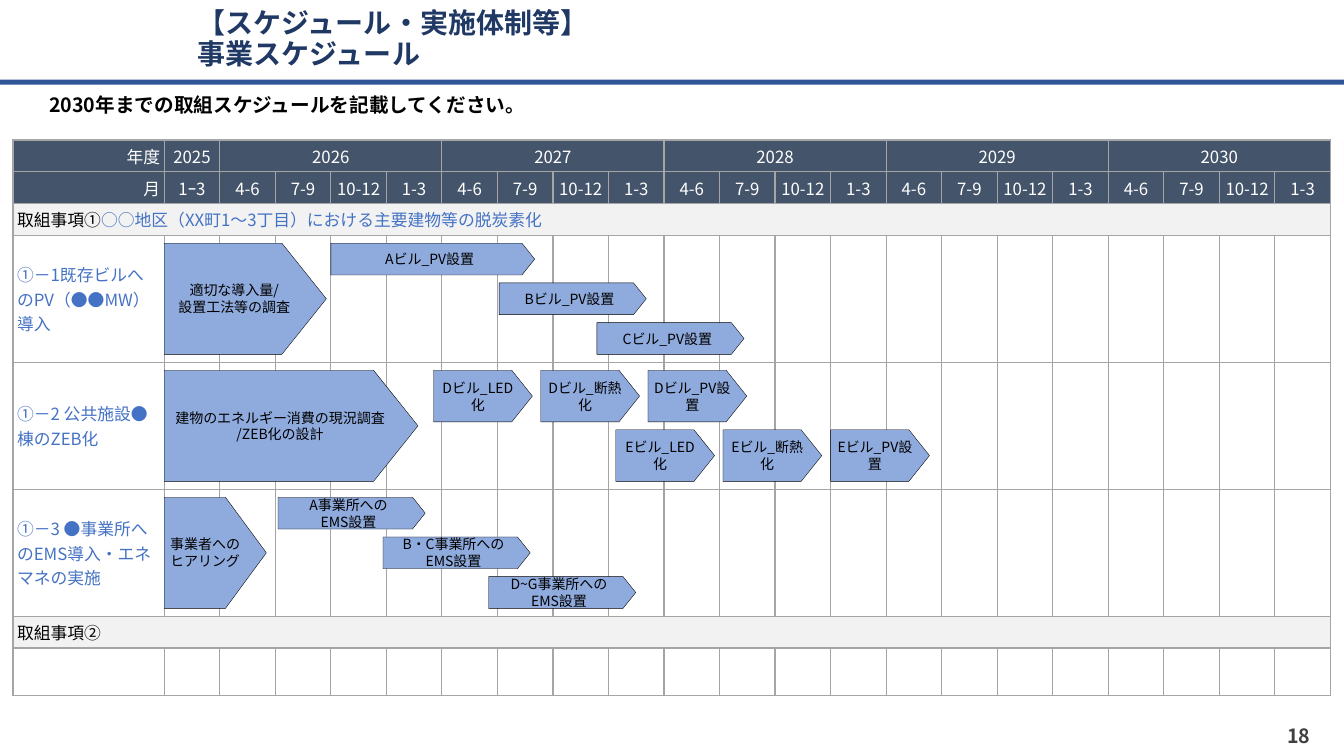
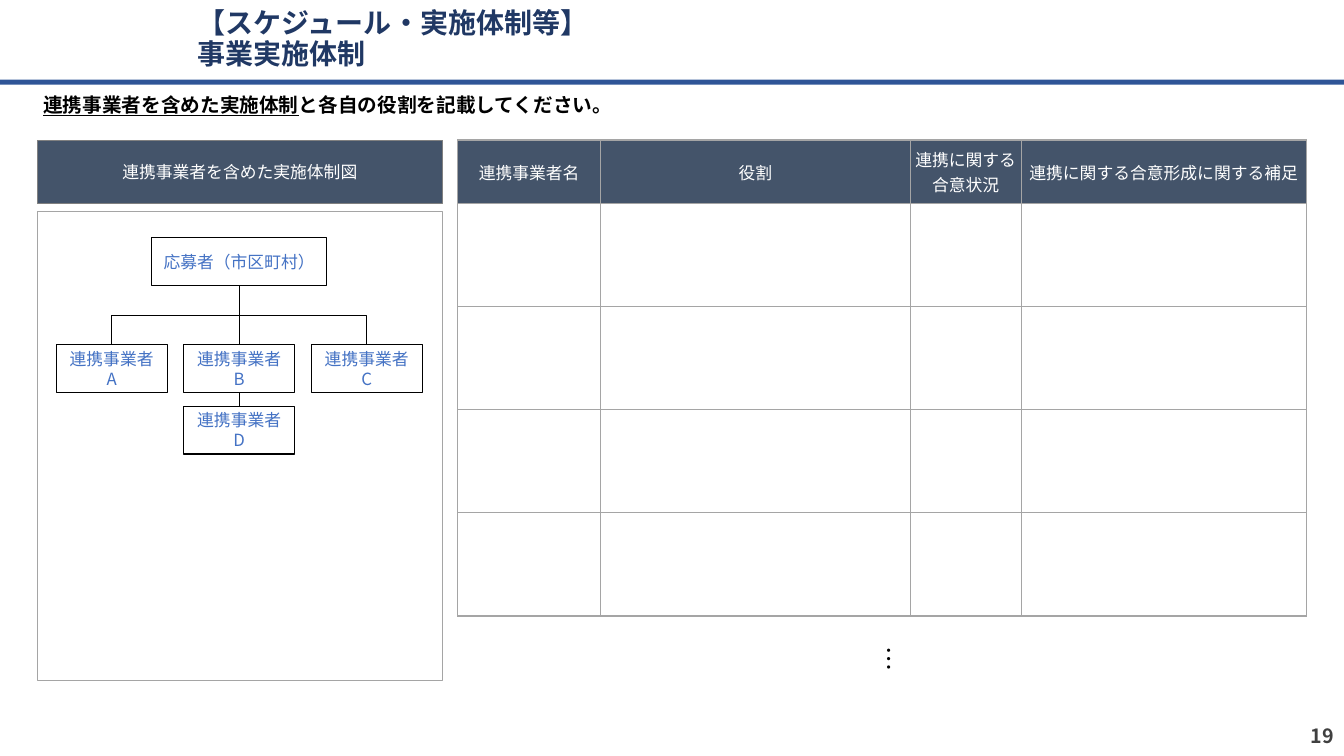
from lxml import etree
from pptx import Presentation
from pptx import util as u
from pptx.dml.color import RGBColor
from pptx.enum import shapes, text
from pptx.oxml import ns

FONT = "Noto Sans CJK JP"
NAVY = RGBColor(0x20, 0x38, 0x64)
BAND = RGBColor(0x2F, 0x55, 0x97)
SLATE = RGBColor(0x44, 0x54, 0x6A)
ARROW = RGBColor(0x8F, 0xAA, 0xDC)
BLUE = RGBColor(0x44, 0x72, 0xC4)
PALE = RGBColor(0xF2, 0xF2, 0xF2)
RULE = RGBColor(0xA5, 0xA5, 0xA5)
EDGE = RGBColor(0x80, 0x80, 0x80)
DARK = RGBColor(0x40, 0x40, 0x40)
BLACK = RGBColor(0, 0, 0)
WHITE = RGBColor(0xFF, 0xFF, 0xFF)

LEFT, CENTER, RIGHT = text.PP_ALIGN.LEFT, text.PP_ALIGN.CENTER, text.PP_ALIGN.RIGHT
MIDDLE, TOP = text.MSO_ANCHOR.MIDDLE, text.MSO_ANCHOR.TOP
RECTANGLE = shapes.MSO_SHAPE.RECTANGLE
ROUNDED = shapes.MSO_SHAPE.ROUNDED_RECTANGLE
PENTAGON = shapes.MSO_SHAPE.PENTAGON

TIGHT = (0.04, 0, 0.04, 0)
EVEN = (0.04, 0.04, 0.04, 0.04)
ROOMY = (0.1, 0.05, 0.1, 0.05)

CONTENT_TOP = 18.53
HEADER = 8.4


class Deck:
    """Lengths are percentages of the slide's width and height."""

    def __init__(self):
        self.presentation = Presentation()
        self.presentation.slide_width = u.Inches(13.33)
        self.presentation.slide_height = u.Inches(7.5)
        self.slide = None

    def x(self, share):
        return u.Emu(round(self.presentation.slide_width * share / 100))

    def y(self, share):
        return u.Emu(round(self.presentation.slide_height * share / 100))

    def area(self, left, top, width, height):
        return self.x(left), self.y(top), self.x(width), self.y(height)

    def add_text(self, frame, runs, size, color, align=LEFT, bold=False):
        paragraph = frame.paragraphs[0]
        paragraph.alignment = align
        if isinstance(runs, str):
            runs = [(runs, {})]
        for content, style in runs:
            for index, line in enumerate(content.split("\n")):
                if index:
                    paragraph.add_line_break()
                run = paragraph.add_run()
                run.text = line
                font = run.font
                font.size = u.Pt(size)
                font.bold = bold
                font.underline = style.get("underline")
                font.color.rgb = style.get("color", color)
                font.name = FONT
                properties = run._r.get_or_add_rPr()
                etree.SubElement(properties, ns.qn("a:ea"), typeface=FONT)
        return paragraph

    def frame(self, shape, insets, anchor=MIDDLE):
        frame = shape.text_frame
        frame.word_wrap = True
        frame.auto_size = text.MSO_AUTO_SIZE.NONE
        frame.vertical_anchor = anchor
        (frame.margin_left, frame.margin_top,
         frame.margin_right, frame.margin_bottom) = map(u.Inches, insets)
        return frame

    def box(self, area, kind=RECTANGLE, fill=None, line=None, weight=0.75,
            runs="", size=12, color=BLACK, align=CENTER, bold=False, insets=TIGHT):
        shape = self.slide.shapes.add_shape(kind, *self.area(*area))
        shape.shadow.inherit = False
        if fill is None:
            shape.fill.background()
        else:
            shape.fill.solid()
            shape.fill.fore_color.rgb = fill
        if line is None:
            shape.line.fill.background()
        else:
            shape.line.color.rgb = line
            shape.line.width = u.Pt(weight)
        if runs:
            self.add_text(self.frame(shape, insets), runs, size, color, align, bold)
        return shape

    def label(self, area, runs, size, color, align, bold=False, insets=ROOMY, anchor=MIDDLE):
        shape = self.slide.shapes.add_textbox(*self.area(*area))
        frame = self.frame(shape, insets, anchor)
        self.add_text(frame, runs, size, color, align, bold)
        return frame

    def new_slide(self, heading, lead, number, number_left, lead_insets):
        layout = self.presentation.slide_layouts[5]
        self.slide = self.presentation.slides.add_slide(layout)
        self.box((0, 10.53, 100, 0.67), fill=BAND)
        title = self.slide.shapes.title
        title.left, title.top, title.width, title.height = self.area(13.95, 0, 79.13, 10.53)
        paragraph = self.add_text(self.frame(title, ROOMY),
                                  "【スケジュール・実施体制等】\n" + heading, 20, NAVY, bold=True)
        paragraph.line_spacing = 0.9
        self.label((number_left, 94.67, 22.5, 5.33), number, 14, DARK, RIGHT, True)
        self.box((2.78, 11.2, 94.5, 5.3), ROUNDED, runs=lead, size=14,
                 align=LEFT, bold=True, insets=lead_insets)

    def table(self, left, top, columns, rows):
        graphic = self.slide.shapes.add_table(
            len(rows), len(columns), *self.area(left, top, sum(columns), sum(rows)))
        table = graphic.table
        table.first_row = table.horz_banding = False
        for column, width in zip(table.columns, columns):
            column.width = self.x(width)
        for row, height in zip(table.rows, rows):
            row.height = self.y(height)
        for cell in table.iter_cells():
            self.style_cell(cell)
        return table

    def style_cell(self, cell):
        cell.vertical_anchor = MIDDLE
        (cell.margin_left, cell.margin_top,
         cell.margin_right, cell.margin_bottom) = map(u.Inches, TIGHT)
        cell.fill.background()
        etree.SubElement(cell.text_frame.paragraphs[0]._p, ns.qn("a:endParaRPr"), sz="1200")
        properties = cell._tc.get_or_add_tcPr()
        for index, side in enumerate(("lnL", "lnR", "lnT", "lnB")):
            border = etree.Element(ns.qn("a:" + side), w=str(u.Pt(1)))
            fill = etree.SubElement(border, ns.qn("a:solidFill"))
            etree.SubElement(fill, ns.qn("a:srgbClr"), val=str(RULE))
            properties.insert(index, border)

    def fill_cell(self, cell, runs, color=WHITE, fill=SLATE, align=CENTER):
        if fill is not None:
            cell.fill.solid()
            cell.fill.fore_color.rgb = fill
        self.add_text(cell.text_frame, runs, 12, color, align)

    def line(self, start, end, bent=False):
        kind = shapes.MSO_CONNECTOR.ELBOW if bent else shapes.MSO_CONNECTOR.STRAIGHT
        connector = self.slide.shapes.add_connector(
            kind, self.x(start[0]), self.y(start[1]), self.x(end[0]), self.y(end[1]))
        connector.line.color.rgb = BLACK
        connector.line.width = u.Pt(0.5)
        properties = connector.element.spPr
        if bent:
            properties.find(ns.qn("a:prstGeom")).set("prst", "bentConnector2")
        etree.SubElement(properties, ns.qn("a:effectLst"))


def schedule_slide(deck):
    deck.new_slide("事業スケジュール", "2030年までの取組スケジュールを記載してください。",
                   "18", 75.75, ROOMY)
    left, label_width, month_count = 0.97, 11.25, 21
    month_width = (98.03 - label_width) / month_count
    bar, tall = HEADER / 2, 16.8
    table = deck.table(left, CONTENT_TOP, [label_width] + [month_width] * month_count,
                       [bar] * 3 + [tall] * 3 + [bar, 6.27])

    deck.fill_cell(table.cell(0, 0), "年度", align=RIGHT)
    deck.fill_cell(table.cell(1, 0), "月", align=RIGHT)
    deck.fill_cell(table.cell(0, 1), "2025")
    for index in range(5):
        first = 2 + index * 4
        table.cell(0, first).merge(table.cell(0, first + 3))
        deck.fill_cell(table.cell(0, first), str(2026 + index))
    quarters = ["1ｰ3"] + ["4-6", "7-9", "10-12", "1-3"] * 5
    for column, quarter in enumerate(quarters, 1):
        deck.fill_cell(table.cell(1, column), quarter)

    sections = {
        2: [("取組事項①", {}),
            ("○○地区（XX町1～3丁目）における主要建物等の脱炭素化", {"color": BLUE})],
        6: "取組事項➁",
    }
    for row, runs in sections.items():
        table.cell(row, 0).merge(table.cell(row, month_count))
        deck.fill_cell(table.cell(row, 0), runs, BLACK, PALE, LEFT)

    short, medium = 1.78, 2.65
    measures = [
        ("①－1既存ビルへのPV（●●MW）導入", 3, (2.92, "適切な導入量/\n設置工法等の調査"), [
            (0, 3, 3.67, "Aビル_PV設置"),
            (1, 6.03, medium, "Bビル_PV設置"),
            (2, 7.79, medium, "Cビル_PV設置")]),
        ("①－2 公共施設●棟のZEB化", 2, (4.57, "建物のエネルギー消費の現況調査\n/ZEB化の設計"), [
            (0, 4.85, short, "Dビル_LED化"),
            (0, 6.78, short, "Dビル_断熱化"),
            (0, 8.71, short, "Dビル_PV設置"),
            (1, 8.13, short, "Eビル_LED化"),
            (1, 10.06, short, "Eビル_断熱化"),
            (1, 12, short, "Eビル_PV設置")]),
        ("①－3 ●事業所へのEMS導入・エネマネの実施", 3, (1.84, "事業者へのヒアリング"), [
            (0, 2.05, medium, "A事業所への\nEMS設置"),
            (1, 3.94, medium, "B・C事業所への\nEMS設置"),
            (2, 5.84, medium, "D~G事業所への\nEMS設置")]),
    ]
    gap = 1.05

    def arrow(start, length, top, height, caption):
        area = (left + label_width + start * month_width, top, length * month_width, height)
        shape = deck.box(area, PENTAGON, ARROW, BLACK, 0.25, caption, 10, insets=EVEN)
        shape.adjustments[0] = 0.4

    for index, (name, lanes, (survey_length, survey), steps) in enumerate(measures):
        deck.fill_cell(table.cell(3 + index, 0), name, BLUE, None, LEFT)
        top = CONTENT_TOP + 3 * bar + index * tall + gap
        inner = tall - 2 * gap
        lane_height = (inner - gap * (lanes - 1)) / lanes
        arrow(0, survey_length, top, inner, survey)
        for lane, start, length, caption in steps:
            arrow(start, length, top + lane * (lane_height + gap), lane_height, caption)


def organisation_slide(deck):
    deck.new_slide("事業実施体制",
                   [("連携事業者を含めた実施体制", {"underline": True}),
                    ("と各自の役割を記載してください。", {})], "19", 77.5, TIGHT)
    table = deck.table(34.05, CONTENT_TOP, [10.65, 23.03, 8.25, 21.23], [HEADER] + [13.64] * 4)
    headings = ["連携事業者名", "役割", "連携に関する合意状況", "連携に関する合意形成に関する補足"]
    for column, heading in enumerate(headings):
        deck.fill_cell(table.cell(0, column), heading)

    panel_left, panel_width = 2.78, 30.15
    deck.box((panel_left, CONTENT_TOP, panel_width, HEADER), fill=SLATE, line=EDGE,
             weight=0.25, runs="連携事業者を含めた実施体制図", color=WHITE)
    deck.box((panel_left, 28, panel_width, 62), line=RULE, weight=1)
    dots = deck.label((64.8, 85.47, 2.85, 5.33), "…", 18, BLACK, CENTER,
                      insets=TIGHT, anchor=TOP)
    dots._txBody.bodyPr.set("vert", "eaVert")

    middle, pitch, height = 17.8, 9.49, 6.33
    applicant_top, partner_top, lower_top = 31.47, 45.6, 53.73
    fork = (applicant_top + height + partner_top) / 2

    def party(center, top, width, name):
        deck.box((center - width / 2, top, width, height), line=BLACK, runs=name, color=BLUE)

    party(middle, applicant_top, 13, "応募者（市区町村）")
    for offset, letter in zip((-1, 0, 1), "ABC"):
        party(middle + offset * pitch, partner_top, 8.25, "連携事業者\n" + letter)
        if offset:
            deck.line((middle, fork), (middle + offset * pitch, partner_top), bent=True)
    party(middle, lower_top, 8.25, "連携事業者\nD")
    deck.line((middle, applicant_top + height), (middle, partner_top))
    deck.line((middle, partner_top + height), (middle, lower_top))


def main():
    deck = Deck()
    schedule_slide(deck)
    organisation_slide(deck)
    deck.presentation.save("out.pptx")


if __name__ == "__main__":
    main()
